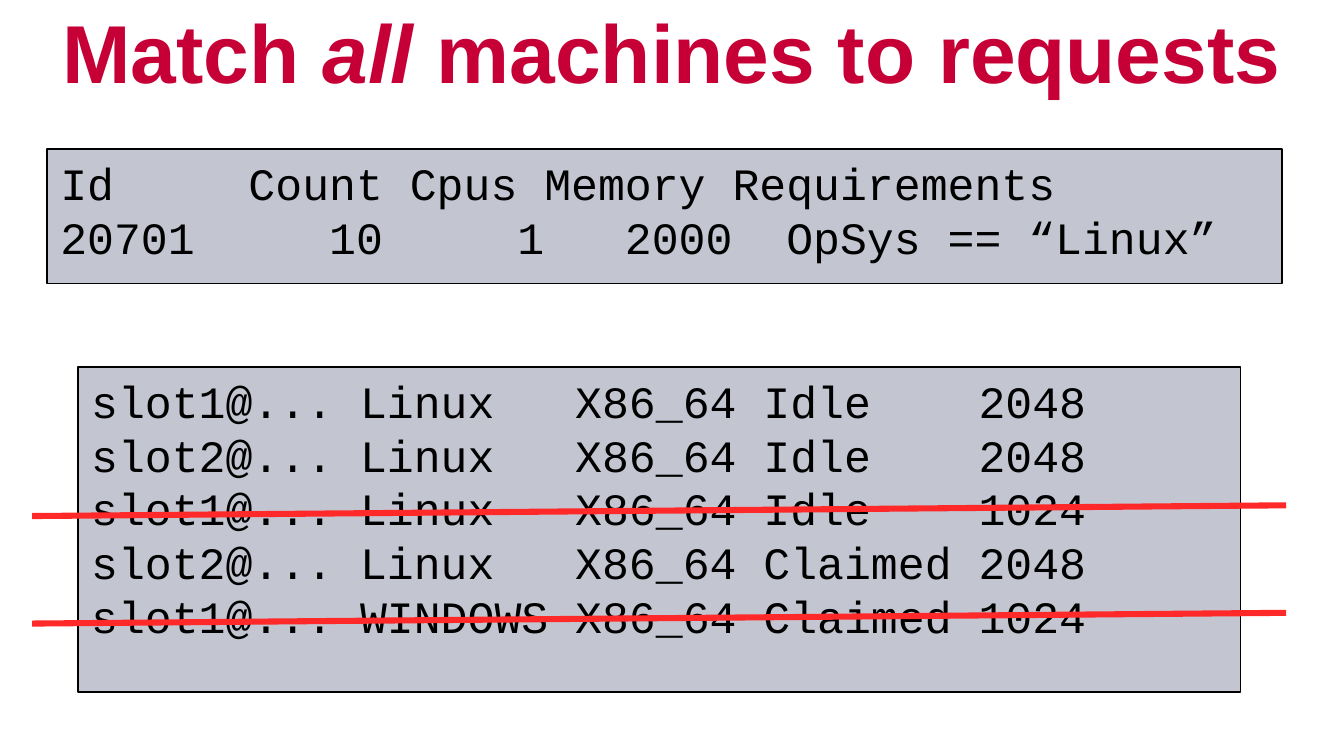
from lxml.etree import SubElement
from pptx import Presentation
from pptx.dml.color import RGBColor
from pptx.enum.shapes import MSO_CONNECTOR as Connector, MSO_SHAPE as Shape
from pptx.enum.text import MSO_ANCHOR as Anchor, PP_ALIGN as Align
from pptx.oxml.ns import qn
from pptx.util import Inches, Pt

CRIMSON = RGBColor(0xC6, 0x00, 0x36)
PANEL_GREY = RGBColor(0xC3, 0xC5, 0xD1)
STRIKE_RED = RGBColor(0xFF, 0x29, 0x29)
BLACK = RGBColor(0x00, 0x00, 0x00)

REQUEST_ROWS = [
    "Id     Count Cpus Memory Requirements",
    "20701     10     1   2000  OpSys == “Linux”",
]
MACHINE_ROWS = [
    "slot1@... Linux   X86_64 Idle    2048",
    "slot2@... Linux   X86_64 Idle    2048",
    "slot1@... Linux   X86_64 Idle    1024",
    "slot2@... Linux   X86_64 Claimed 2048",
    "slot1@... WINDOWS X86_64 Claimed 1024",
]
ROW_PITCH = 0.4
FIRST_ROW_STRIKE = 3.04
REJECTED_ROWS = [2, 4]


class SlideBuilder:
    heading_font = "Arial"
    code_font = "Courier New"
    code_size = Pt(24)
    code_line_spacing = Pt(28.8)
    side_margin = Inches(0.1)
    end_margin = Inches(0.05)

    def __init__(self, presentation):
        self.slide = presentation.slides.add_slide(presentation.slide_layouts[5])

    def prepare_frame(self, shape, anchor):
        frame = shape.text_frame
        frame.word_wrap = True
        frame.vertical_anchor = anchor
        frame.margin_left = frame.margin_right = self.side_margin
        frame.margin_top = frame.margin_bottom = self.end_margin
        return frame

    def add_run(self, paragraph, text, font_name, size, color):
        run = paragraph.add_run()
        run.text = text
        run.font.name = font_name
        run.font.size = size
        run.font.color.rgb = color
        return run

    def title(self, parts):
        """Fill the title from (text, italic) pairs."""
        title = self.slide.shapes.title
        title.left, title.top = Inches(0), Inches(0)
        title.width, title.height = Inches(10), Inches(0.75)
        paragraph = self.prepare_frame(title, Anchor.MIDDLE).paragraphs[0]
        paragraph.alignment = Align.CENTER
        for text, italic in parts:
            run = self.add_run(paragraph, text, self.heading_font, Pt(44), CRIMSON)
            run.font.bold = True
            run.font.italic = italic

    def listing(self, left, top, width, height, rows):
        """Add a panel of console output."""
        panel = self.slide.shapes.add_shape(
            Shape.RECTANGLE, Inches(left), Inches(top), Inches(width), Inches(height))
        panel.shadow.inherit = False
        panel.fill.solid()
        panel.fill.fore_color.rgb = PANEL_GREY
        panel.line.color.rgb = BLACK
        panel.line.width = Pt(0.75)
        frame = self.prepare_frame(panel, Anchor.TOP)
        for index, row in enumerate(rows):
            paragraph = frame.add_paragraph() if index else frame.paragraphs[0]
            paragraph.alignment = Align.LEFT
            paragraph.line_spacing = self.code_line_spacing
            self.add_run(paragraph, row, self.code_font, self.code_size, BLACK)

    def strike(self, top):
        """Cross out a row with a slightly rising line."""
        line = self.slide.shapes.add_connector(
            Connector.STRAIGHT, Inches(0.24), Inches(top), Inches(9.57), Inches(top - 0.08))
        line.line.color.rgb = STRIKE_RED
        line.line.width = Pt(3.25)
        SubElement(line._element.spPr, qn("a:effectLst"))


def main():
    presentation = Presentation()
    presentation.slide_width = Inches(10)
    presentation.slide_height = Inches(10) * 9 // 16

    builder = SlideBuilder(presentation)
    builder.title([("Match ", False), ("all", True), (" machines to requests", False)])
    builder.listing(0.35, 1.11, 9.19, 1, REQUEST_ROWS)
    builder.listing(0.58, 2.73, 8.65, 2.42, MACHINE_ROWS)
    for row in REJECTED_ROWS:
        builder.strike(FIRST_ROW_STRIKE + row * ROW_PITCH)

    presentation.save("out.pptx")


if __name__ == "__main__":
    main()
